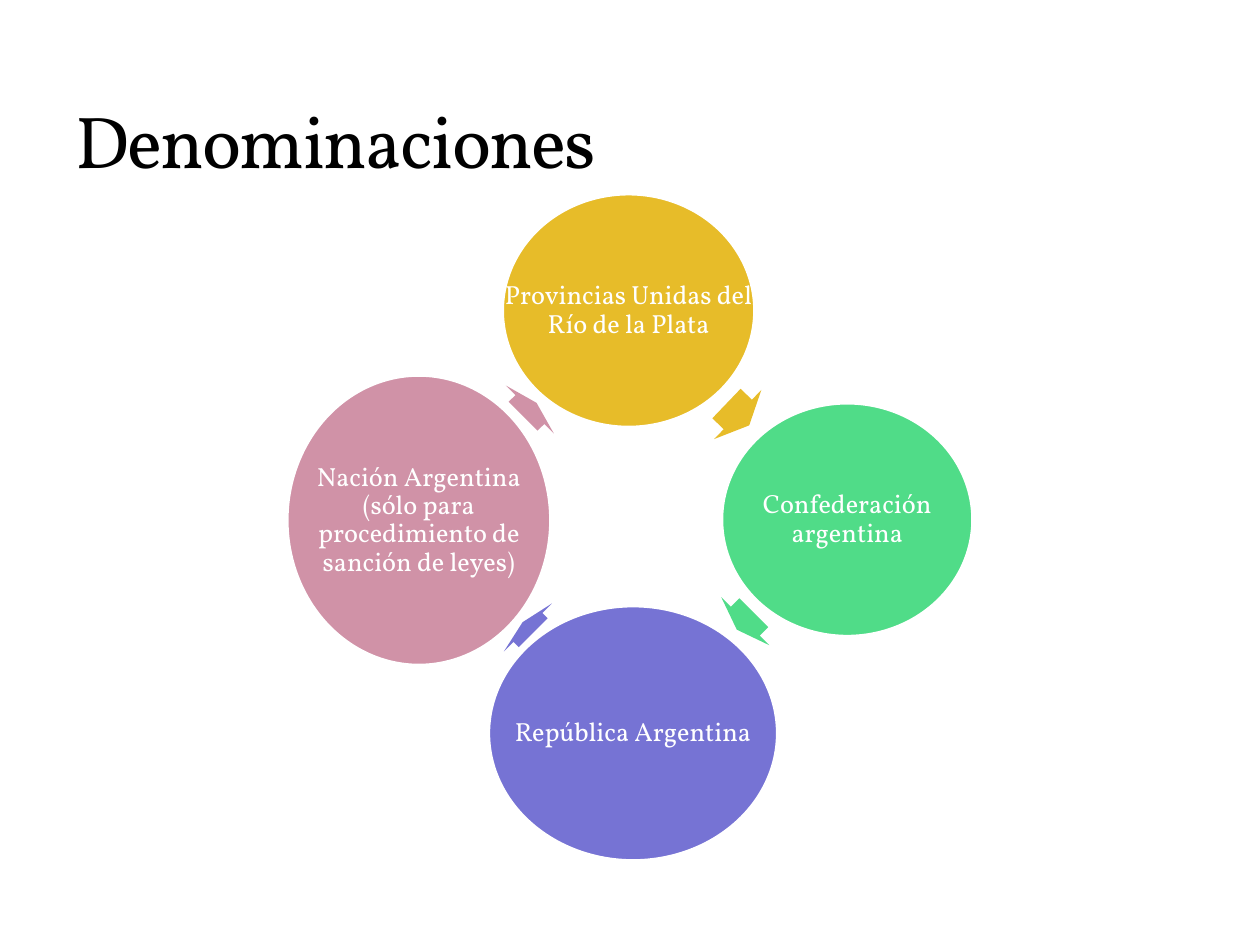
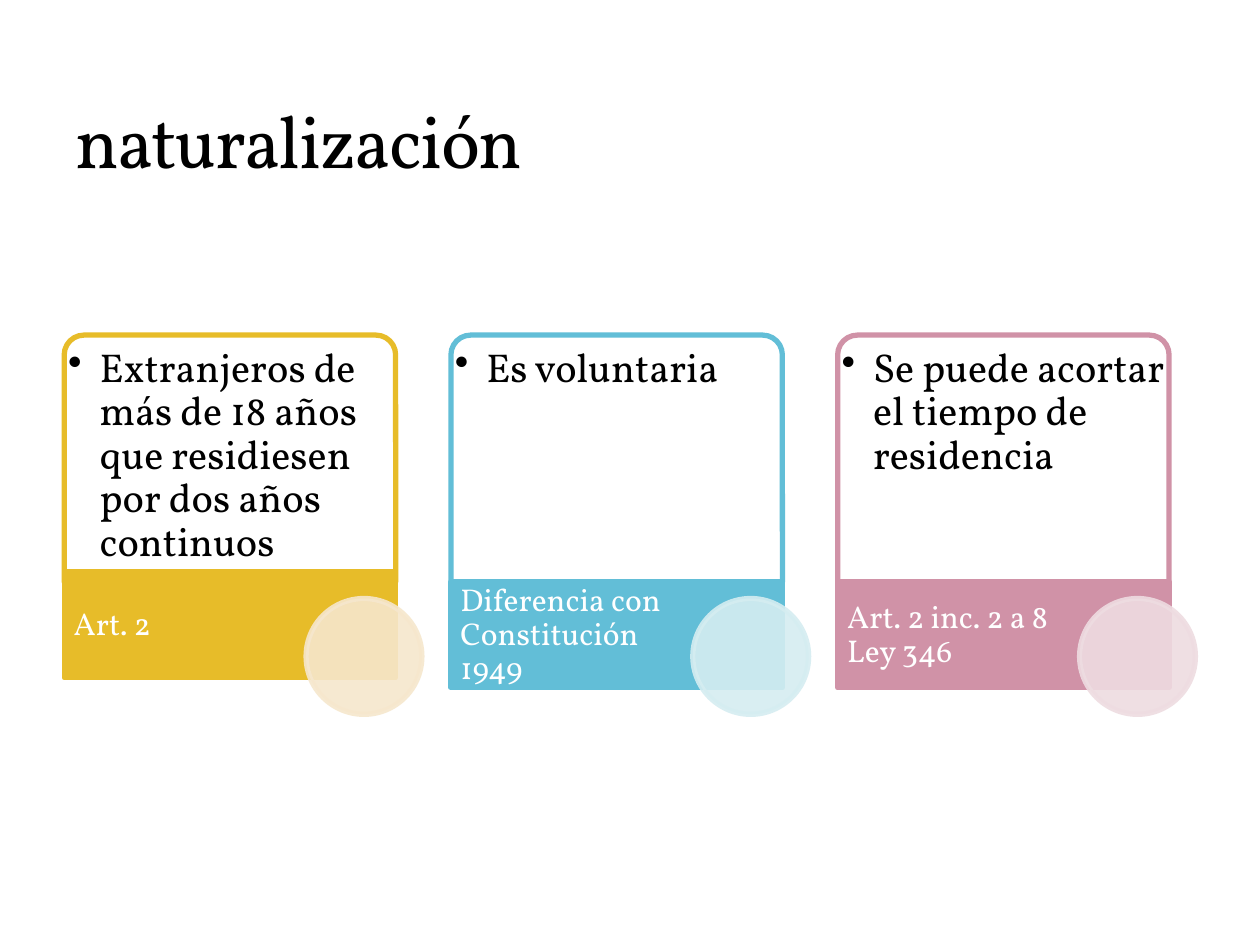
from lxml.etree import SubElement
from pptx import Presentation
from pptx.dml.color import RGBColor
from pptx.enum.shapes import MSO_SHAPE as Shape
from pptx.enum.text import MSO_ANCHOR as Anchor, PP_ALIGN as Align
from pptx.oxml.ns import qn
from pptx.util import Pt

BLACK = RGBColor(0x00, 0x00, 0x00)
WHITE = RGBColor(0xFF, 0xFF, 0xFF)
GOLD = RGBColor(0xE7, 0xBC, 0x29)
GREEN = RGBColor(0x50, 0xDC, 0x88)
VIOLET = RGBColor(0x76, 0x73, 0xD4)
ROSE = RGBColor(0xD0, 0x92, 0xA7)
BLUE = RGBColor(0x62, 0xBE, 0xD7)
PALE_GOLD = RGBColor(0xF6, 0xE7, 0xCD)
PALE_BLUE = RGBColor(0xD5, 0xED, 0xF1)
PALE_ROSE = RGBColor(0xEE, 0xDC, 0xE1)

DENOMINATIONS = [
    ("Provincias Unidas del Río de la Plata", GOLD,
     (286.5, 110.2, 145.4, 134.6), (412.6, 217.4, 18, 38.9), 43.8),
    ("Confederación argentina", GREEN,
     (411.8, 229.7, 144.7, 134.6), (419, 335.5, 13.7, 38.9), 135),
    ("República Argentina", VIOLET,
     (278.6, 345.6, 166.3, 146.9), (297.4, 339.1, 8.6, 38.9), 225),
    ("Nación Argentina (sólo para procedimiento de sanción de leyes)", ROSE,
     (163.4, 213.8, 151.9, 167), (297.4, 214.6, 10.8, 38.9), 315),
]
CARDS = [
    ("Extranjeros de más de 18 años que residiesen por dos años continuos",
     "Art. 2", GOLD, PALE_GOLD, 326.9),
    ("Es voluntaria", "Diferencia con Constitución 1949", BLUE, PALE_BLUE, 332.6),
    ("Se puede acortar el tiempo de residencia",
     "Art. 2 inc. 2 a 8 Ley 346", ROSE, PALE_ROSE, 332.6),
]
CARD_LEFT, CARD_TOP, CARD_STEP = 36.7, 191.5, 221
CARD_WIDTH, CARD_HEIGHT = 189.4, 141.1
BAND_TEXT_WIDTH, BAND_HEIGHT = 133.2, 60.5
BADGE_OFFSET, BADGE_TOP, BADGE_SIZE = 138.2, 342, 66.2


class Deck:
    font = "Vollkorn"
    outline = 3

    def __init__(self):
        self.show = Presentation()
        self.show.slide_width, self.show.slide_height = Pt(720), Pt(540)
        self.page = None

    def new_page(self, title):
        self.page = self.show.slides.add_slide(self.show.slide_layouts[6])
        para = self.text(title, (36, 12.2, 648, 95.8), 42, BLACK,
                         Anchor.BOTTOM, (7.2, 3.6, 7.2, 3.6), spacing=1)
        para.runs[0].font._element.set("spc", "-100")

    def shape(self, kind, area, fill, line=None, adjust=(), turn=0,
              fill_alpha=100, line_alpha=100):
        shape = self.page.shapes.add_shape(kind, *map(Pt, area))
        shape.shadow.inherit = False
        shape.rotation = turn
        for index, value in enumerate(adjust):
            shape.adjustments[index] = value
        self.paint(shape.fill, fill, fill_alpha)
        if line is None:
            shape.line.fill.background()
        else:
            shape.line.width = Pt(self.outline)
            self.paint(shape.line.fill, line, line_alpha)

    def paint(self, fill, color, alpha):
        fill.solid()
        fill.fore_color.rgb = color
        if alpha < 100:
            node = fill._xPr.find(qn("a:solidFill"))[0]
            SubElement(node, qn("a:alpha"), val=str(alpha * 1000))

    def text(self, words, area, size, color, anchor, insets,
             align=Align.LEFT, spacing=0.9):
        box = self.page.shapes.add_textbox(*map(Pt, area))
        frame = box.text_frame
        frame.word_wrap = True
        frame.vertical_anchor = anchor
        (frame.margin_left, frame.margin_top,
         frame.margin_right, frame.margin_bottom) = map(Pt, insets)
        frame.text = words
        para = frame.paragraphs[0]
        para.alignment = align
        para.line_spacing = spacing
        span = para.runs[0]
        span.font.name = self.font
        span.font.size = Pt(size)
        span.font.color.rgb = color
        return para

    def bullet(self, para, indent):
        props = para._p.get_or_add_pPr()
        props.set("marL", str(Pt(indent)))
        props.set("indent", str(-Pt(indent)))
        SubElement(props, qn("a:buChar"), char="•")

    def circle(self, words, color, area):
        self.shape(Shape.OVAL, area, color, WHITE)
        self.text(words, area, 15, WHITE, Anchor.MIDDLE, (1.4,) * 4, Align.CENTER)

    def arrow(self, color, area, turn):
        self.shape(Shape.RIGHT_ARROW, area, color, adjust=(0.6, 0.5), turn=turn)

    def card(self, left, words, label, color, pale, band_top):
        body = (left, CARD_TOP, CARD_WIDTH, CARD_HEIGHT)
        self.shape(Shape.ROUND_2_SAME_RECTANGLE, body, WHITE, color,
                   adjust=(0.08, 0), fill_alpha=90)
        para = self.text(words, body, 23, BLACK, Anchor.TOP, (2.2, 7.2, 2.2, 2.2))
        self.bullet(para, 18)
        self.shape(Shape.RECTANGLE, (left, band_top, CARD_WIDTH, BAND_HEIGHT),
                   color, color)
        self.text(label, (left, band_top, BAND_TEXT_WIDTH, BAND_HEIGHT), 18,
                  WHITE, Anchor.MIDDLE, (5.4, 0, 1.8, 0))
        self.shape(Shape.OVAL, (left + BADGE_OFFSET, BADGE_TOP, BADGE_SIZE, BADGE_SIZE),
                   pale, pale, fill_alpha=90, line_alpha=90)


def main():
    deck = Deck()
    deck.new_page("Denominaciones")
    for words, color, circle_area, arrow_area, turn in DENOMINATIONS:
        deck.circle(words, color, circle_area)
        deck.arrow(color, arrow_area, turn)

    deck.new_page("naturalización")
    for index, card in enumerate(CARDS):
        deck.card(CARD_LEFT + index * CARD_STEP, *card)

    deck.show.save("out.pptx")


if __name__ == "__main__":
    main()
